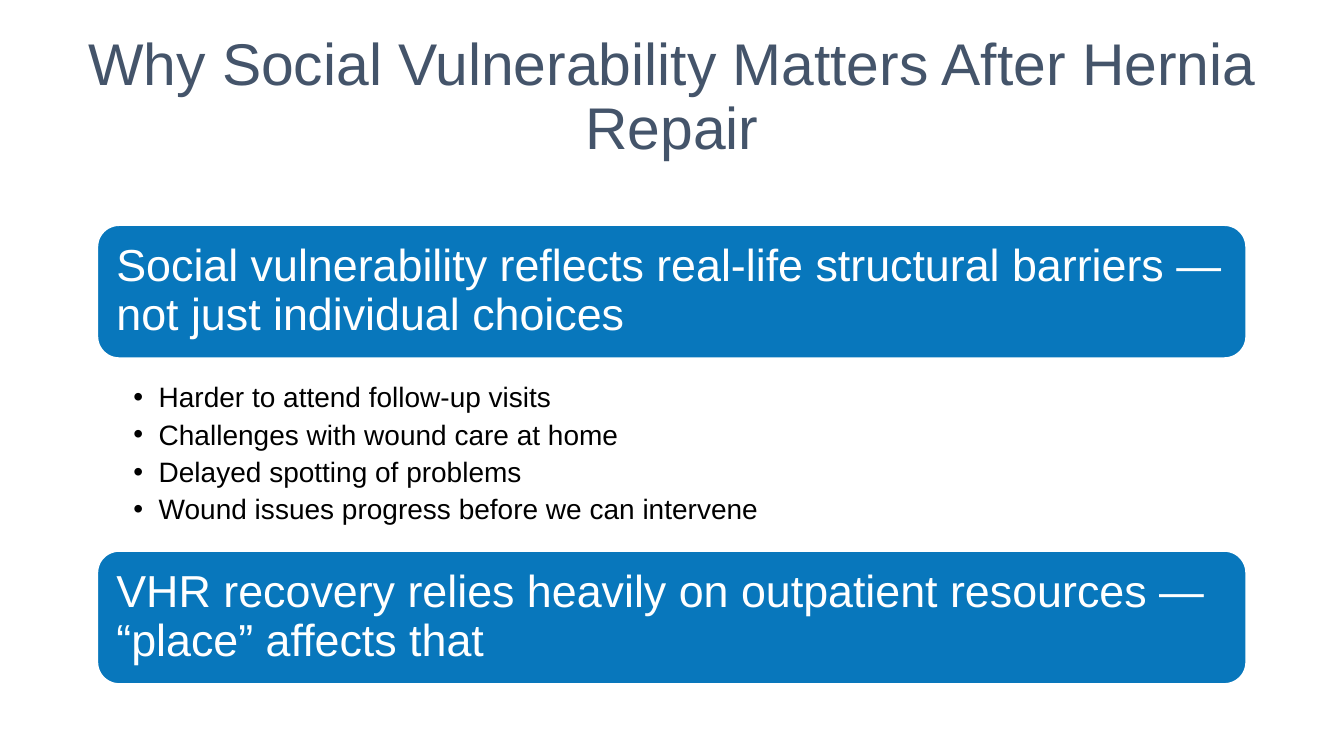
from dataclasses import dataclass

from lxml import etree
from pptx import Presentation
from pptx.dml.color import RGBColor
from pptx.enum.shapes import MSO_SHAPE
from pptx.enum.text import MSO_ANCHOR, PP_ALIGN
from pptx.oxml.ns import qn
from pptx.util import Cm, Pt

ROUNDED = MSO_SHAPE.ROUNDED_RECTANGLE
MIDDLE, TOP = MSO_ANCHOR.MIDDLE, MSO_ANCHOR.TOP
CENTER, LEFT = PP_ALIGN.CENTER, PP_ALIGN.LEFT

FONT = "Arial"
COLORS = {"title": "44546A", "banner": "0877BC", "white": "FFFFFF", "black": "000000"}

SLIDE_WIDTH, SLIDE_HEIGHT = 33.87, 19.05
CONTENT_LEFT, CONTENT_WIDTH = 2.44, 28.98
BANNER_HEIGHT = 3.38
BULLET_INDENT = 0.64


@dataclass
class Banner:
    top: float
    text: str


BANNERS = [
    Banner(5.66, "Social vulnerability reflects real-life structural barriers — "
                 "not just individual choices"),
    Banner(13.87, "VHR recovery relies heavily on outpatient resources — "
                  "“place” affects that"),
]
BARRIERS = [
    "Harder to attend follow-up visits",
    "Challenges with wound care at home",
    "Delayed spotting of problems",
    "Wound issues progress before we can intervene",
]


def rgb(name: str) -> RGBColor:
    return RGBColor.from_string(COLORS[name])


def set_frame(frame, anchor, left: float, top: float, right: float, bottom: float) -> None:
    frame.word_wrap = True
    frame.vertical_anchor = anchor
    frame.margin_left, frame.margin_top = Cm(left), Cm(top)
    frame.margin_right, frame.margin_bottom = Cm(right), Cm(bottom)


def write(para, text: str, size: int, color: str, align=LEFT) -> None:
    para.alignment = align
    para.line_spacing = 0.9
    span = para.add_run()
    span.text = text
    span.font.name = FONT
    span.font.size = Pt(size)
    span.font.color.rgb = rgb(color)


def add_bullet(para) -> None:
    para.level = 1
    properties = para._p.get_or_add_pPr()
    properties.set("marL", str(Cm(BULLET_INDENT)))
    properties.set("indent", str(-Cm(BULLET_INDENT)))
    bullet_color = etree.SubElement(properties, qn("a:buClr"))
    etree.SubElement(bullet_color, qn("a:srgbClr"), val=COLORS["black"])
    etree.SubElement(properties, qn("a:buFont"), typeface=FONT)
    etree.SubElement(properties, qn("a:buChar"), char="•")


def add_title(page, text: str) -> None:
    box = page.shapes.add_textbox(Cm(0), Cm(0.64), Cm(SLIDE_WIDTH), Cm(3.68))
    set_frame(box.text_frame, MIDDLE, 0.25, 0.13, 0.25, 0.13)
    write(box.text_frame.paragraphs[0], text, 42, "title", CENTER)


def add_banner(page, banner: Banner) -> None:
    box = page.shapes.add_shape(ROUNDED, Cm(CONTENT_LEFT), Cm(banner.top),
                                Cm(CONTENT_WIDTH), Cm(BANNER_HEIGHT))
    box.shadow.inherit = False
    box.fill.solid()
    box.fill.fore_color.rgb = rgb("banner")
    box.line.color.rgb = rgb("white")
    box.line.width = Pt(2)
    set_frame(box.text_frame, MIDDLE, 0.33, 0.33, 0.33, 0.33)
    write(box.text_frame.paragraphs[0], banner.text, 32, "white")


def add_bullet_list(page, items: list[str]) -> None:
    box = page.shapes.add_textbox(Cm(CONTENT_LEFT), Cm(9.6), Cm(CONTENT_WIDTH), Cm(3.56))
    frame = box.text_frame
    set_frame(frame, TOP, 0.92, 0.07, 0.4, 0.07)
    for index, item in enumerate(items):
        para = frame.add_paragraph() if index else frame.paragraphs[0]
        add_bullet(para)
        para.space_after = Pt(5)
        write(para, item, 20, "black")


def main() -> None:
    deck = Presentation()
    deck.slide_width, deck.slide_height = Cm(SLIDE_WIDTH), Cm(SLIDE_HEIGHT)
    page = deck.slides.add_slide(deck.slide_layouts[6])

    # Heading
    add_title(page, "Why Social Vulnerability Matters After Hernia Repair")

    # Key messages and the barriers between them
    for banner in BANNERS:
        add_banner(page, banner)
    add_bullet_list(page, BARRIERS)

    deck.save("out.pptx")


if __name__ == "__main__":
    main()
